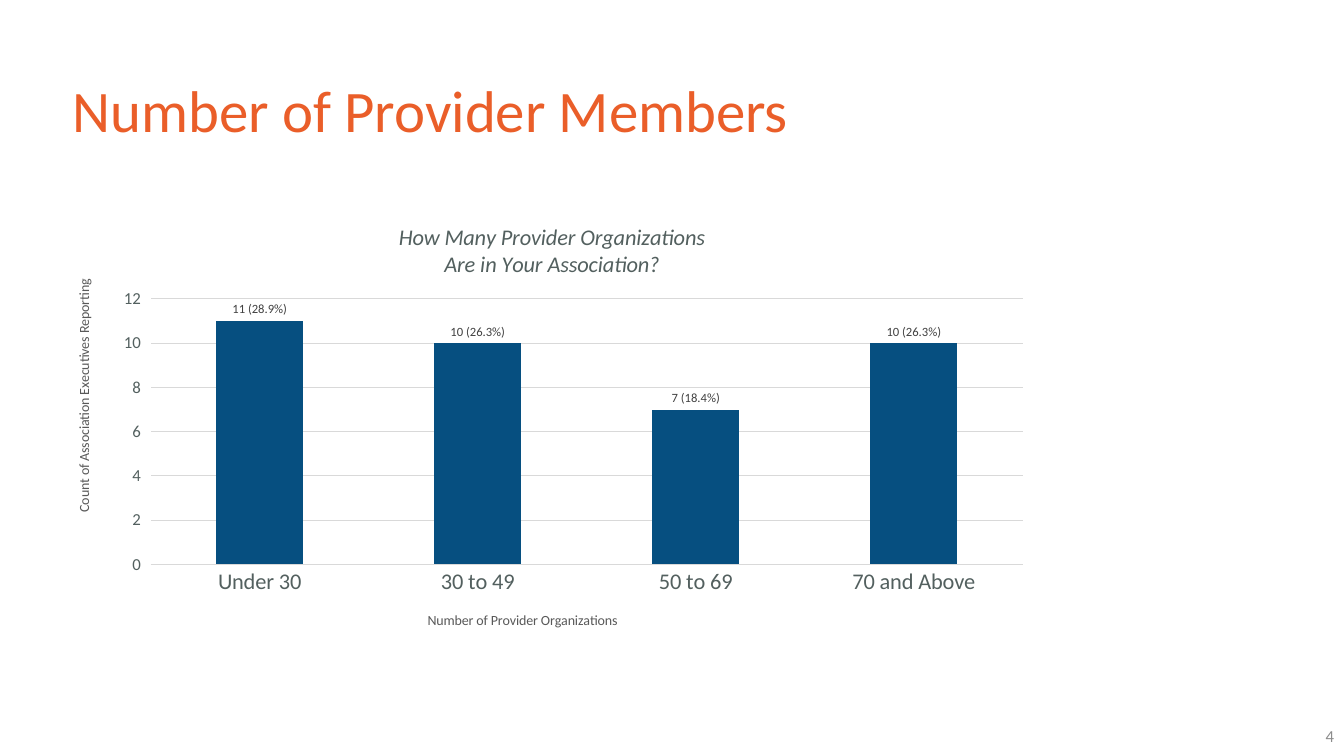
import pptx
import pptx.chart.data
import pptx.dml.color
import pptx.enum.chart
import pptx.enum.text
import pptx.oxml.ns
import pptx.oxml.xmlchemy
import pptx.util

Inches = pptx.util.Inches
Pt = pptx.util.Pt
RGBColor = pptx.dml.color.RGBColor
Align = pptx.enum.text.PP_ALIGN
Tick = pptx.enum.chart.XL_TICK_MARK

ORANGE = RGBColor(0xEA, 0x5E, 0x29)
NAVY = RGBColor(0x06, 0x4F, 0x80)
SLATE = RGBColor(0x53, 0x60, 0x5F)
CHARCOAL = RGBColor(0x40, 0x40, 0x40)
AXIS_GRAY = RGBColor(0x59, 0x59, 0x59)
PAGE_GRAY = RGBColor(0x8C, 0x8C, 0x8C)
GRID_GRAY = RGBColor(0xD9, 0xD9, 0xD9)

COUNTS = {
    "Under 30": (11, "11 (28.9%)"),
    "30 to 49": (10, "10 (26.3%)"),
    "50 to 69": (7, "7 (18.4%)"),
    "70 and Above": (10, "10 (26.3%)"),
}


def style_font(font, size, color, italic=False):
    font.name = "Calibri"
    font.size = Pt(size)
    font.bold = False
    font.italic = italic
    font.color.rgb = color


def write_text(text_frame, text, size, color, italic=False, align=None, spacing=None):
    paragraph = text_frame.paragraphs[0]
    paragraph.alignment = align
    paragraph.line_spacing = spacing
    style_font(paragraph.font, size, color, italic)
    for index, line in enumerate(text.split("\n")):
        if index:
            paragraph.add_line_break()
        run = paragraph.add_run()
        run.text = line
        style_font(run.font, size, color, italic)


def place(element, target=None, **fractions):
    layout = element.find(pptx.oxml.ns.qn("c:layout"))
    if layout is None:
        layout = pptx.oxml.xmlchemy.OxmlElement("c:layout")
        element.insert(0, layout)
    manual = pptx.oxml.xmlchemy.OxmlElement("c:manualLayout")
    settings = {"layoutTarget": target} if target else {}
    settings |= {"xMode": "edge", "yMode": "edge"} | fractions
    for name, value in settings.items():
        setting = pptx.oxml.xmlchemy.OxmlElement(f"c:{name}")
        setting.set("val", str(value))
        manual.append(setting)
    layout.append(manual)


class Deck:
    def __init__(self):
        self.presentation = pptx.Presentation()
        self.presentation.slide_width = Inches(13.33)
        self.presentation.slide_height = Inches(7.5)
        self.slide = self.presentation.slides.add_slide(self.presentation.slide_layouts[6])

    def add_text(self, text, left, top, width, height, **style):
        shape = self.slide.shapes.add_textbox(
            Inches(left), Inches(top), Inches(width), Inches(height))
        shape.text_frame.word_wrap = True
        shape.text_frame.vertical_anchor = pptx.enum.text.MSO_ANCHOR.MIDDLE
        write_text(shape.text_frame, text, **style)

    def add_column_chart(self, counts, left, top, width, height):
        data = pptx.chart.data.CategoryChartData()
        data.categories = list(counts)
        data.add_series("Series 1", [value for value, label in counts.values()])
        chart = self.slide.shapes.add_chart(
            pptx.enum.chart.XL_CHART_TYPE.COLUMN_CLUSTERED,
            Inches(left), Inches(top), Inches(width), Inches(height), data).chart
        chart.has_legend = False
        chart.font.name = "Calibri"
        chart.font.size = Pt(10)
        plot = chart.plots[0]
        plot.gap_width = 150
        plot.vary_by_categories = False
        place(plot._element.getparent(), "inner", x=0.09, y=0.22, w=0.89, h=0.6)
        self.color_columns(plot.series[0], [label for value, label in counts.values()])
        return chart

    def color_columns(self, series, labels):
        series.format.fill.solid()
        series.format.fill.fore_color.rgb = NAVY
        data_labels = series.data_labels
        data_labels.show_value = True
        data_labels.position = pptx.enum.chart.XL_LABEL_POSITION.OUTSIDE_END
        style_font(data_labels.font, 9, CHARCOAL)
        for index, text in enumerate(labels):
            label = series.points[index].data_label
            write_text(label.text_frame, text, 9, CHARCOAL)
            label.position = pptx.enum.chart.XL_LABEL_POSITION.OUTSIDE_END

    def add_chart_title(self, title, text, x, y, **style):
        write_text(title.text_frame, text, **style)
        place(title._element, x=x, y=y)

    def style_axis(self, axis, size, tick):
        style_font(axis.tick_labels.font, size, SLATE)
        axis.major_tick_mark = tick
        axis.minor_tick_mark = Tick.NONE

    def style_line(self, line):
        line.color.rgb = GRID_GRAY
        line.width = Pt(0.75)


def main():
    deck = Deck()
    deck.add_text("Number of Provider Members", 0.62, 0.4, 12.1, 1.45,
                  size=42, color=ORANGE, spacing=0.9)
    deck.add_text("4", 10.33, 7.1, 3, 0.4, size=12, color=PAGE_GRAY, align=Align.RIGHT)

    chart = deck.add_column_chart(COUNTS, 0.62, 2, 9.72, 4.39)
    deck.add_chart_title(chart.chart_title,
                         "How Many Provider Organizations\nAre in Your Association?",
                         0.34, 0.04, size=16, color=SLATE, italic=True, align=Align.CENTER)

    category_axis = chart.category_axis
    deck.style_axis(category_axis, 16, Tick.NONE)
    deck.style_line(category_axis.format.line)
    deck.add_chart_title(category_axis.axis_title, "Number of Provider Organizations",
                         0.37, 0.92, size=10, color=AXIS_GRAY)

    value_axis = chart.value_axis
    deck.style_axis(value_axis, 12, Tick.OUTSIDE)
    value_axis.minimum_scale = 0
    value_axis.maximum_scale = 12
    value_axis.major_unit = 2
    value_axis.format.line.fill.background()
    deck.style_line(value_axis.major_gridlines.format.line)
    deck.add_chart_title(value_axis.axis_title, "Count of Association Executives Reporting",
                         0.01, 0.17, size=10, color=AXIS_GRAY)
    text_body = value_axis.axis_title.text_frame._txBody
    text_body.find(pptx.oxml.ns.qn("a:bodyPr")).set("rot", "-5400000")

    deck.presentation.save("out.pptx")


if __name__ == "__main__":
    main()
